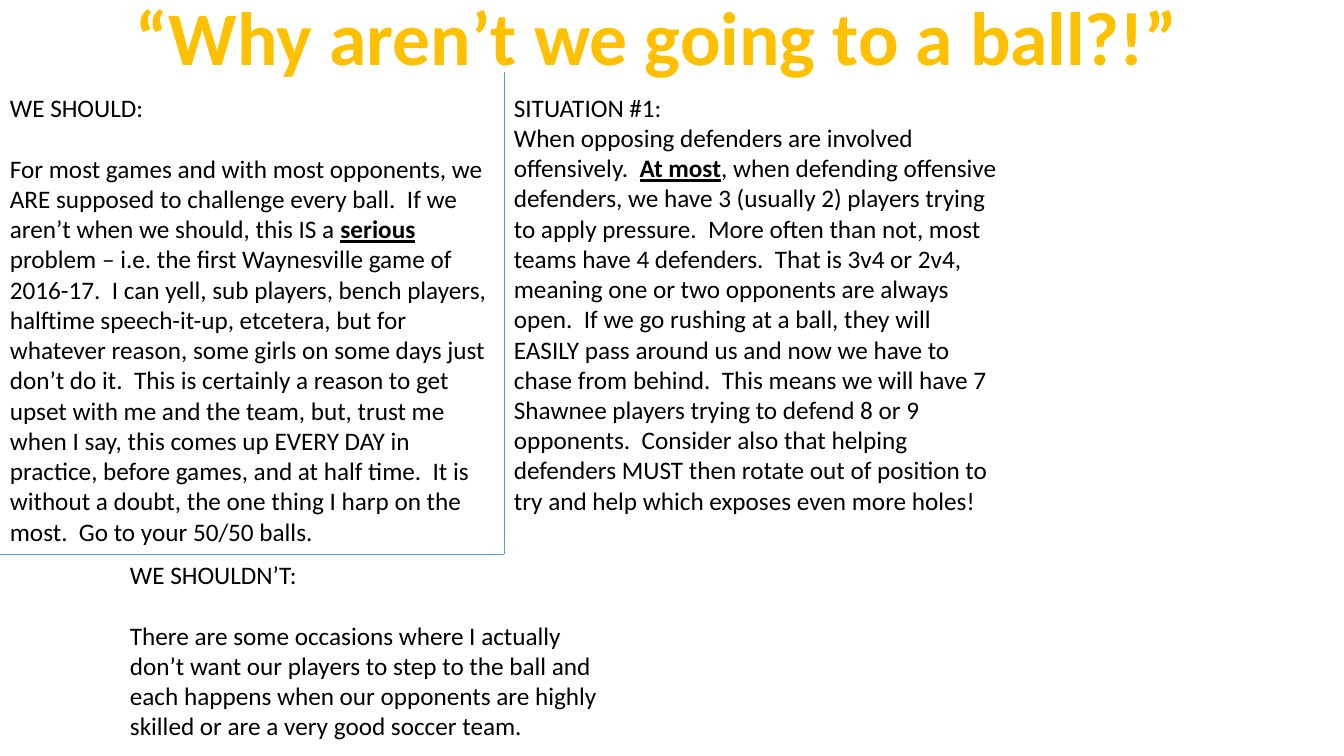
from lxml import etree
from pptx import Presentation
from pptx.dml.color import RGBColor
from pptx.enum.shapes import MSO_CONNECTOR
from pptx.enum.text import MSO_AUTO_SIZE, PP_ALIGN
from pptx.oxml.ns import qn
from pptx.util import Emu, Pt

STRAIGHT = MSO_CONNECTOR.STRAIGHT
CENTER, LEFT = PP_ALIGN.CENTER, PP_ALIGN.LEFT
GROW = MSO_AUTO_SIZE.SHAPE_TO_FIT_TEXT

GOLD = RGBColor(0xFF, 0xC0, 0x00)
BLACK = RGBColor(0x00, 0x00, 0x00)
BLUE = RGBColor(0x5B, 0x9B, 0xD5)

PX = 914400 / 100.8
SLIDE_WIDTH, SLIDE_HEIGHT = 1344, 756
COLUMN, BODY_TOP, DIVIDER_TOP, DIVIDER_BOTTOM = 504, 87, 72, 554
INDENT = 120
BLANK_LINE = 22  # points, one line of body text

TITLE_FONT = {"name": "Calibri", "size": Pt(54), "bold": True}
BODY_FONT = {"name": "Calibri", "size": Pt(18)}
STRESS_FONT = {**BODY_FONT, "bold": True, "underline": True}

TITLE = "“Why aren’t we going to a ball?!”"

# Pieces of a body alternate between plain and stressed text.
SHOULD = [
    "For most games and with most opponents, we ARE supposed to challenge every "
    "ball.  If we aren’t when we should, this IS a ",
    "serious",
    " problem – i.e. the first Waynesville game of 2016-17.  I can yell, sub "
    "players, bench players, halftime speech-it-up, etcetera, but for whatever "
    "reason, some girls on some days just don’t do it.  This is certainly a "
    "reason to get upset with me and the team, but, trust me when I say, this "
    "comes up EVERY DAY in practice, before games, and at half time.  It is "
    "without a doubt, the one thing I harp on the most.  Go to your 50/50 balls.",
]
SITUATION = [
    "When opposing defenders are involved offensively.  ",
    "At most",
    ", when defending offensive defenders, we have 3 (usually 2) players trying "
    "to apply pressure.  More often than not, most teams have 4 defenders.  That "
    "is 3v4 or 2v4, meaning one or two opponents are always open.  If we go "
    "rushing at a ball, they will EASILY pass around us and now we have to chase "
    "from behind.  This means we will have 7 Shawnee players trying to defend 8 "
    "or 9 opponents.  Consider also that helping defenders MUST then rotate out "
    "of position to try and help which exposes even more holes!",
]
SHOULD_NOT = [
    "There are some occasions where I actually don’t want our players to step to "
    "the ball and each happens when our opponents are highly skilled or are a "
    "very good soccer team.",
]

# Heading, body, gap between them in points, (left, top, width, height)
SECTIONS = [
    ("WE SHOULD:", SHOULD, BLANK_LINE, (0, BODY_TOP, COLUMN, 468)),
    ("SITUATION #1:", SITUATION, 0, (COLUMN, BODY_TOP, COLUMN, 437)),
    ("WE SHOULDN’T:", SHOULD_NOT, BLANK_LINE, (INDENT, DIVIDER_BOTTOM, 490, 224)),
]
DIVIDERS = [
    (0, DIVIDER_BOTTOM, COLUMN, DIVIDER_BOTTOM),
    (COLUMN, DIVIDER_BOTTOM, COLUMN, DIVIDER_TOP),
]


def to_emu(lengths):
    return [Emu(round(length * PX)) for length in lengths]


def add_box(page, place, wrap):
    frame = page.shapes.add_textbox(*to_emu(place)).text_frame
    frame.word_wrap = wrap
    frame.auto_size = GROW
    return frame


def add_span(para, text, font, color):
    span = para.add_run()
    span.text = text
    for name, value in font.items():
        setattr(span.font, name, value)
    span.font.color.rgb = color


def add_title(page):
    para = add_box(page, (INDENT, -15, 1074, 102), False).paragraphs[0]
    para.alignment = CENTER
    add_span(para, TITLE, TITLE_FONT, GOLD)


def add_section(page, heading, body, gap, place):
    frame = add_box(page, place, True)
    add_span(frame.paragraphs[0], heading, BODY_FONT, BLACK)
    para = frame.add_paragraph()
    para.space_before = Pt(gap)
    for index, piece in enumerate(body):
        add_span(para, piece, STRESS_FONT if index % 2 else BODY_FONT, BLACK)
    for para in frame.paragraphs:
        para.alignment = LEFT


def add_divider(page, ends):
    divider = page.shapes.add_connector(STRAIGHT, *to_emu(ends))
    divider.line.color.rgb = BLUE
    divider.line.width = Pt(0.5)
    etree.SubElement(divider._element.spPr, qn("a:effectLst"))


def main():
    deck = Presentation()
    deck.slide_width, deck.slide_height = to_emu((SLIDE_WIDTH, SLIDE_HEIGHT))
    page = deck.slides.add_slide(deck.slide_layouts[6])
    add_title(page)
    for section in SECTIONS:
        add_section(page, *section)
    for ends in DIVIDERS:
        add_divider(page, ends)
    deck.save("out.pptx")


if __name__ == "__main__":
    main()
